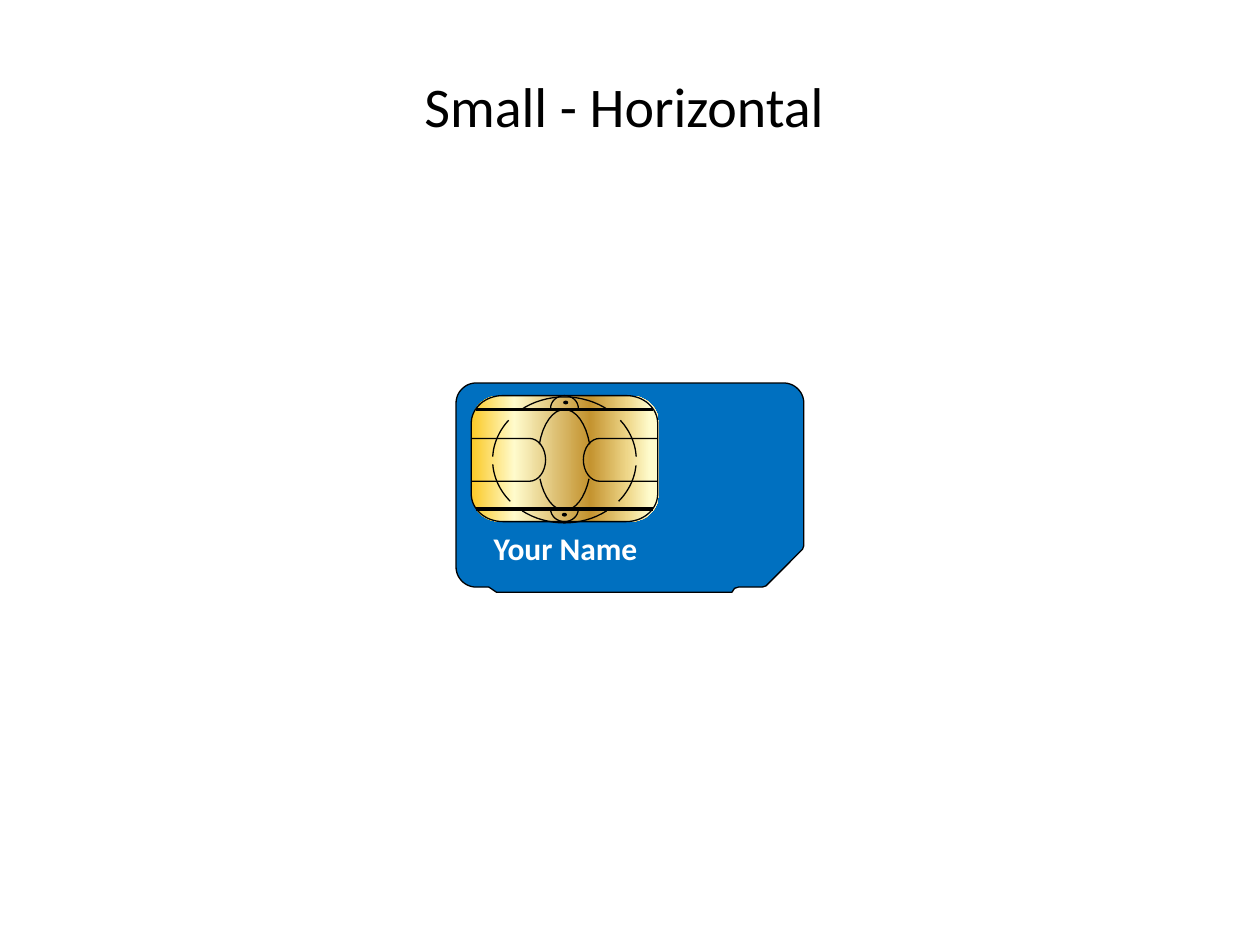
import math
from dataclasses import dataclass
from typing import Any

import pptx
import pptx.dml.color
import pptx.enum.shapes
import pptx.enum.text
import pptx.oxml
import pptx.oxml.ns
import pptx.util
from pptx.util import Inches

Point = tuple[float, float]
RGB = pptx.dml.color.RGBColor.from_string
Kind = pptx.enum.shapes.MSO_SHAPE
Align = pptx.enum.text.PP_ALIGN


@dataclass(frozen=True)
class Theme:
    card: str = "0070C0"
    ink: str = "000000"
    light: str = "FFFFFF"
    gold: tuple = ((0, "FBC926"), (23, "FFFBCC"), (63, "C3922E"),
                   (83, "EED688"), (95, "FFFBCC"))
    font: str = "Calibri"
    head: int = 32
    label: int = 18
    line: int = 0


@dataclass(frozen=True)
class Arc:
    x: float
    y: float
    wide: float
    high: float
    start: float
    end: float

    def points(self, steps: int = 16) -> list[Point]:
        turns = [math.radians(self.start + (self.end - self.start) * n / steps)
                 for n in range(steps + 1)]
        return [(self.x + self.wide * math.cos(t), self.y + self.high * math.sin(t))
                for t in turns]


@dataclass(frozen=True)
class Box:
    x: float
    y: float
    wide: float
    high: float

    def place(self) -> list[int]:
        return [Inches(v) for v in (self.x, self.y, self.wide, self.high)]


THEME = Theme()
MID_X, MID_Y = 4.48, 3.65
LEFT, RIGHT, TOP, BASE = 3.74, 5.22, 3.14, 4.14
RING = [(232, 308), (321, 357), (139, 176), (54, 126), (5, 41), (183, 219)]
OVAL = [(22, 158), (198, 342)]
DOTS = [Box(4.47, 3.18, 0.04, 0.03), Box(4.46, 4.07, 0.04, 0.03)]


def style(item: Any, values: dict[str, Any]) -> None:
    for name, value in values.items():
        setattr(item, name, value)


def ink(shape: Any) -> None:
    shape.line.color.rgb = RGB(THEME.ink)
    shape.line.width = pptx.util.Pt(THEME.line)


def paint(shape: Any, color: str) -> None:
    shape.fill.solid()
    shape.fill.fore_color.rgb = RGB(color)


def trace(group: Any, points: list[Point], color: str = "", close: bool = False) -> None:
    spots = [(Inches(x), Inches(y)) for x, y in points]
    maker = group.shapes.build_freeform(*spots[0])
    maker.add_line_segments(spots[1:], close=close)
    shape = maker.convert_to_shape()
    shape.shadow.inherit = False
    if color:
        paint(shape, color)
    else:
        shape.fill.background()
    ink(shape)


def draw_card(group: Any) -> None:
    edge = [(3.86, 4.66)]
    for x, y, start in ((3.78, 4.5, 90), (3.78, 3.2, 180), (6.22, 3.2, 270)):
        edge += Arc(x, y, 0.16, 0.16, start, start + 90).points()
    edge += [(6.38, 4.33), (6.37, 4.36), (6.08, 4.65), (6.05, 4.66), (5.86, 4.66),
             (5.83, 4.67), (5.81, 4.7), (3.94, 4.7), (3.91, 4.68), (3.88, 4.66)]
    trace(group, edge, THEME.card, True)


def draw_plate(group: Any) -> None:
    plate = group.shapes.add_shape(Kind.ROUNDED_RECTANGLE, *Box(LEFT, TOP, 1.49, 1).place())
    plate.adjustments[0] = 0.225
    plate.shadow.inherit = False
    plate.line.fill.background()
    plate.fill.gradient()
    plate.fill.gradient_angle = 0
    stops = plate.element.xpath(".//a:gsLst")[0]
    for old in list(stops):
        stops.remove(old)
    for spot, color in THEME.gold:
        stops.append(pptx.oxml.parse_xml(
            f'<a:gs {pptx.oxml.ns.nsdecls("a")} pos="{spot * 1000}">'
            f'<a:srgbClr val="{color}"/></a:gs>'))
    wide, high = 0.25, 0.22
    edge = []
    for x, y, start in ((RIGHT - wide, BASE - high, 0), (LEFT + wide, BASE - high, 90),
                        (LEFT + wide, TOP + high, 180), (RIGHT - wide, TOP + high, 270)):
        edge += Arc(x, y, wide, high, start, start + 90).points()
    trace(group, edge, close=True)


def draw_lines(group: Any) -> None:
    for start, end in RING:
        trace(group, Arc(MID_X, MID_Y, 0.57, 0.5, start, end).points())
    for start, end in OVAL:
        trace(group, Arc(MID_X, MID_Y, 0.21, 0.4, start, end).points())
    for edge, x, start, end in ((LEFT, 4.2, -90, 90), (RIGHT, 4.76, 270, 90)):
        bend = Arc(x, MID_Y, 0.13, 0.17, start, end).points()
        trace(group, [(edge, bend[0][1]), *bend, (edge, bend[-1][1])])
    for y in (3.25, 4.04):
        line = group.shapes.add_connector(
            pptx.enum.shapes.MSO_CONNECTOR.STRAIGHT,
            Inches(3.78), Inches(y), Inches(5.18), Inches(y))
        ink(line)
        line.element.spPr.append(pptx.oxml.parse_xml(
            f'<a:effectLst {pptx.oxml.ns.nsdecls("a")}/>'))
    for y, start in ((3.24, 180), (4.04, 0)):
        trace(group, Arc(MID_X, y, 0.11, 0.1, start, start + 180).points())
    for box in DOTS:
        dot = group.shapes.add_shape(Kind.OVAL, *box.place())
        dot.shadow.inherit = False
        paint(dot, THEME.ink)
        dot.line.fill.background()


def write(shape: Any, text: str, size: int, color: str, bold: bool, align: Any) -> None:
    frame = shape.text_frame
    style(frame, {"text": text, "word_wrap": False,
                  "auto_size": pptx.enum.text.MSO_AUTO_SIZE.SHAPE_TO_FIT_TEXT,
                  "vertical_anchor": pptx.enum.text.MSO_ANCHOR.TOP})
    line = frame.paragraphs[0]
    line.alignment = align
    font = line.runs[0].font
    style(font, {"name": THEME.font, "size": pptx.util.Pt(size), "bold": bold})
    font.color.rgb = RGB(color)


def main() -> None:
    deck = pptx.Presentation()
    style(deck, {"slide_width": Inches(10), "slide_height": Inches(7.5)})
    slide = deck.slides.add_slide(deck.slide_layouts[5])
    group = slide.shapes.add_group_shape()
    draw_card(group)
    draw_plate(group)
    draw_lines(group)
    label = group.shapes.add_textbox(*Box(3.82, 4.15, 1.35, 0.4).place())
    write(label, "Your Name", THEME.label, THEME.light, True, Align.LEFT)
    title = slide.shapes.title
    style(title, dict(zip(("left", "top", "width", "height"),
                          Box(3.25, 0.52, 3.51, 0.64).place())))
    write(title, "Small - Horizontal ", THEME.head, THEME.ink, False, Align.CENTER)
    deck.save("out.pptx")


if __name__ == "__main__":
    main()
